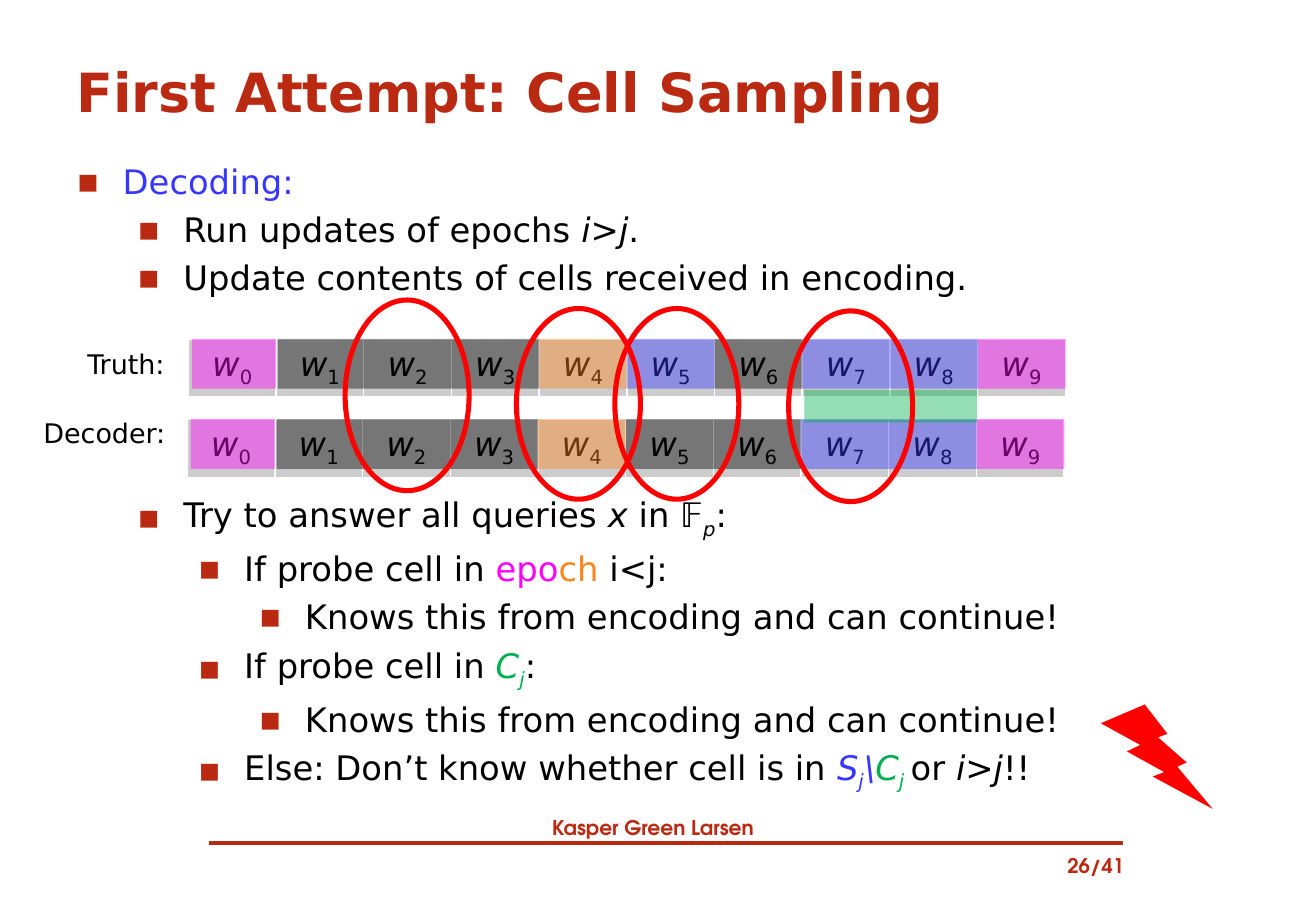
from pptx import Presentation
from pptx.dml.color import RGBColor
from pptx.enum.shapes import MSO_CONNECTOR as Link, MSO_SHAPE as Form
from pptx.enum.text import MSO_ANCHOR as Anchor, MSO_AUTO_SIZE as Fit, PP_ALIGN as Align
from pptx.oxml.ns import qn
from pptx.util import Inches, Pt
from lxml.etree import SubElement as Sub

BRICK = RGBColor(0xBA, 0x2A, 0x12)
BLUE = RGBColor(0x37, 0x37, 0xFF)
BLACK = RGBColor(0, 0, 0)
WHITE = RGBColor(0xFF, 0xFF, 0xFF)
PINK = RGBColor(0xFF, 0, 0xFF)
AMBER = RGBColor(0xFF, 0x85, 0x21)
GREEN = RGBColor(0, 0xB0, 0x50)
GRAY = RGBColor(0xCC, 0xCC, 0xCC)
RED = RGBColor(0xFF, 0, 0)
SANS = "DejaVu Sans"
HEAD = "TeX Gyre Adventor"
CELLS = 10

KNOWN = [("Knows this from encoding and can continue!",)]
LINES = [
    (0, [("Decoding:", "", BLUE)]),
    (1, [("Run updates of epochs ",), ("i", "i"), (">",), ("j", "i"), (".",)]),
    (1, [("Update contents of cells received in encoding.",)]),
    (1, [("Try to answer all queries ",), ("x", "i"), (" in 𝔽",), ("p", "is"), (":",)]),
    (2, [("If probe cell in ",), ("epo", "", PINK), ("ch ", "", AMBER), ("i<j:",)]),
    (3, KNOWN),
    (2, [("If probe cell in ",), ("C", "i", GREEN), ("j", "is", GREEN), (":",)]),
    (3, KNOWN),
    (2, [("Else: Don’t know whether cell is in ",), ("S", "i", BLUE), ("j", "is", BLUE),
         ("\\", "i", BLUE), ("C", "i", GREEN), ("j ", "is", GREEN), ("or ",),
         ("i>j", "i"), ("!!",)]),
]
GAP = 3


def add_run(para, text, style="", color=BLACK, size=20):
    run = para.add_run()
    run.text = text
    font = run.font
    font.name, font.size, font.italic = SANS, Pt(size), "i" in style
    font.color.rgb = color
    if "s" in style:
        run._r.get_or_add_rPr().set("baseline", "-25000")


def place(shape, box):
    shape.left, shape.top, shape.width, shape.height = map(Inches, box)


def add_text(slide, box, text, size, color, name=SANS, bold=False, align=Align.LEFT):
    frame = slide.shapes.add_textbox(*map(Inches, box)).text_frame
    frame.word_wrap = True
    frame.text = text
    para = frame.paragraphs[0]
    para.alignment = align
    font = para.runs[0].font
    font.name, font.size, font.bold = name, Pt(size), bold
    font.color.rgb = color


def add_form(slide, kind, box, color, alpha=None):
    shape = slide.shapes.add_shape(kind, *map(Inches, box))
    shape.shadow.inherit = False
    shape.fill.solid()
    shape.fill.fore_color.rgb = color
    shape.line.fill.background()
    if alpha:
        tint = shape._element.spPr.find(".//" + qn("a:srgbClr"))
        Sub(tint, qn("a:alpha"), val=str(alpha * 1000))
    return shape


def add_title(slide, box):
    title = slide.shapes.title
    place(title, box)
    frame = title.text_frame
    frame.text = "First Attempt: Cell Sampling"
    frame.vertical_anchor = Anchor.MIDDLE
    para = frame.paragraphs[0]
    para.alignment = Align.LEFT
    font = para.runs[0].font
    font.name, font.size, font.bold = SANS, Pt(32), True
    font.color.rgb = BRICK


def add_bullet(para, level):
    props = para._p.get_or_add_pPr()
    props.set("marL", str(Inches(0.38 + level / 2)))
    props.set("indent", str(Inches(-0.38)))
    Sub(Sub(props, qn("a:buClr")), qn("a:srgbClr"), val=str(BRICK))
    Sub(props, qn("a:buFont"), typeface=SANS)
    Sub(props, qn("a:buChar"), char="▪")


def add_body(slide, box):
    body = slide.placeholders[1]
    place(body, box)
    frame = body.text_frame
    frame.auto_size = Fit.NONE
    frame.vertical_anchor = Anchor.TOP
    for idx, (level, runs) in enumerate(LINES):
        para = frame.add_paragraph() if idx else frame.paragraphs[0]
        para.level = level
        add_bullet(para, level)
        para.space_before = Pt(116.4 if idx == GAP else 4.66 if idx else 0)
        for run in runs:
            add_run(para, *run)


def add_edges(cell):
    props = cell._tc.get_or_add_tcPr()
    for idx, side in enumerate(("lnL", "lnR", "lnT", "lnB")):
        line = props.makeelement(qn("a:" + side), {"w": str(Pt(1))})
        Sub(Sub(line, qn("a:solidFill")), qn("a:srgbClr"), val=str(WHITE))
        props.insert(idx, line)


def add_strip(slide, box, sixth):
    left, top, width, height = box
    table = slide.shapes.add_table(1, CELLS, *map(Inches, box)).table
    table.first_row = table.horz_banding = False
    for idx in range(CELLS):
        cell = table.cell(0, idx)
        cell.fill.solid()
        cell.fill.fore_color.rgb = GRAY
        add_edges(cell)
        para = cell.text_frame.paragraphs[0]
        para.alignment = Align.CENTER
        add_run(para, "w", "i")
        add_run(para, str(idx), "s")
    step = width / CELLS
    spans = [(0.04, 1, PINK), (1.02, 4, BLACK), (4, 5, AMBER), (5, 6, sixth),
             (6, 7, BLACK), (7, 9, BLUE), (9, 10, PINK)]
    for start, end, color in spans:
        area = left + start * step, top, (end - start) * step, height
        add_form(slide, Form.RECTANGLE, area, color, 42)


def add_cells(slide, box):
    left, top, width, height = box
    add_strip(slide, (left + 0.01, top, width, height), BLUE)
    add_strip(slide, (left, top + 0.66, width, height), BLACK)
    add_form(slide, Form.RECTANGLE, (left + 5.08, top + 0.42, 1.42, 0.27), GREEN, 42)
    add_text(slide, (left - 0.92, top + 0.02, 1.37, 0.37), "Truth:", 16, BLACK)
    add_text(slide, (left - 1.28, top + 0.59, 1.37, 0.37), "Decoder:", 16, BLACK)
    for across, up in ((2.71, 0.25), (4.95, 0.23), (1.3, 0.32), (3.52, 0.25)):
        ring = add_form(slide, Form.OVAL, (left + across, top - up, 1.02, 1.57), RED)
        ring.fill.background()
        ring.line.color.rgb = RED
        ring.line.width = Pt(3)


def add_foot(slide, box):
    left, top, width, height = box
    add_text(slide, box, "Kasper Green Larsen", 12, BRICK, HEAD, True, Align.CENTER)
    add_text(slide, (left + 7.84, top + 0.32, 0.98, height), "26/41", 12, BRICK,
             HEAD, True, Align.RIGHT)
    ends = left + 1.19, top + 0.28, left + 8.71, top + 0.28
    rule = slide.shapes.add_connector(Link.STRAIGHT, *map(Inches, ends))
    rule.line.color.rgb = BRICK
    rule.line.width = Pt(2.25)
    Sub(rule._element.spPr, qn("a:effectLst"))


def main():
    deck = Presentation()
    deck.slide_width, deck.slide_height = Inches(10.83), Inches(7.5)
    slide = deck.slides.add_slide(deck.slide_layouts[1])
    add_foot(slide, (0.53, 6.66, 9.69, 0.3))
    add_body(slide, (0.53, 1.27, 9.68, 5.2))
    add_title(slide, (0.53, 0.36, 9.75, 0.77))
    add_cells(slide, (1.54, 2.79, 7.22, 0.41))
    add_form(slide, Form.LIGHTNING_BOLT, (9.06, 5.8, 0.92, 0.86), RED)
    deck.save("out.pptx")


if __name__ == "__main__":
    main()
